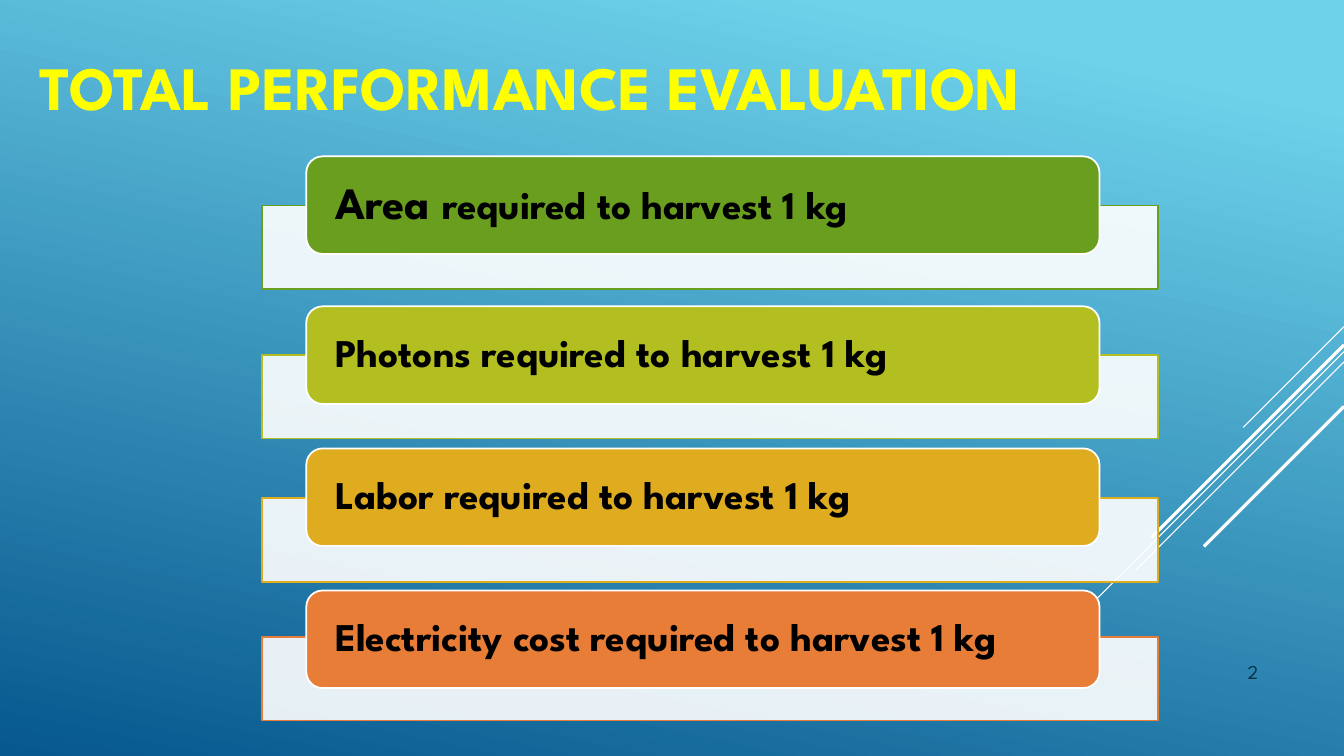
from lxml import etree
from pptx import Presentation
from pptx.dml.color import RGBColor
from pptx.enum.shapes import MSO_CONNECTOR, MSO_SHAPE
from pptx.enum.text import MSO_ANCHOR, PP_ALIGN
from pptx.oxml.ns import qn
from pptx.util import Cm, Pt

RECTANGLE, ROUNDED = MSO_SHAPE.RECTANGLE, MSO_SHAPE.ROUNDED_RECTANGLE
STRAIGHT = MSO_CONNECTOR.STRAIGHT
MIDDLE, BOTTOM = MSO_ANCHOR.MIDDLE, MSO_ANCHOR.BOTTOM
LEFT, RIGHT = PP_ALIGN.LEFT, PP_ALIGN.RIGHT

WHITE = RGBColor(0xFF, 0xFF, 0xFF)
BLACK = RGBColor(0x00, 0x00, 0x00)
YELLOW = RGBColor(0xFF, 0xFF, 0x00)
NAVY = RGBColor(0x0A, 0x30, 0x4A)
SKY = RGBColor(0x6E, 0xD2, 0xEB)
DEEP_BLUE = RGBColor(0x06, 0x58, 0x8E)
GREEN = RGBColor(0x6A, 0x9E, 0x1F)
LIME = RGBColor(0xB3, 0xBE, 0x20)
GOLD = RGBColor(0xDF, 0xAC, 0x1F)
ORANGE = RGBColor(0xE8, 0x7D, 0x37)

PAGE_WIDTH = 33.87


def add_span(para, text, size, color, bold=True):
    span = para.add_run()
    span.text = text
    formats = {"name": "League Spartan", "size": Pt(size), "bold": bold}
    for name, value in formats.items():
        setattr(span.font, name, value)
    span.font.color.rgb = color


def add_panel(kind, left, top, width, height, fill, line):
    panel = page.shapes.add_shape(kind, Cm(left), Cm(top), Cm(width), Cm(height))
    panel.shadow.inherit = False
    panel.fill.solid()
    panel.fill.fore_color.rgb = fill
    panel.line.color.rgb = line
    panel.line.width = Pt(1.25)
    return panel


deck = Presentation()
deck.slide_width, deck.slide_height = Cm(PAGE_WIDTH), Cm(19.05)
page = deck.slides.add_slide(deck.slide_layouts[5])

# Background gradient
backdrop = page.background.fill
backdrop.gradient()
backdrop.gradient_angle = 258
for stop, (position, color) in zip(backdrop.gradient_stops, [(0.1, SKY), (1, DEEP_BLUE)]):
    stop.position = position
    stop.color.rgb = color

# Diagonal lines from the right edge: top, run, weight
for top, run, weight in [
    (8.23, 2.54, 0.75),
    (8.86, 8.28, 0.75),
    (9.12, 5.26, 0.75),
    (8.69, 4.85, 2.25),
    (10.24, 3.53, 2.25),
]:
    ray = page.shapes.add_connector(
        STRAIGHT, Cm(PAGE_WIDTH), Cm(top), Cm(PAGE_WIDTH - run), Cm(top + run))
    ray.line.color.rgb = WHITE
    ray.line.width = Pt(weight)
    etree.SubElement(ray._element.spPr, qn("a:effectLst"))

# Title
title = page.shapes.title
title.left, title.top, title.width, title.height = Cm(0.74), Cm(0.51), Cm(33.12), Cm(3.53)
title.text_frame.vertical_anchor = MIDDLE
para = title.text_frame.paragraphs[0]
para.alignment = LEFT
para.line_spacing = 0.9
add_span(para, "TOTAL PERFORMANCE EVALUATION", 44, YELLOW)

# Page number
number = page.shapes.add_textbox(Cm(28.78), Cm(15.49), Cm(3.18), Cm(1.85)).text_frame
number.word_wrap = True
number.vertical_anchor = BOTTOM
number.paragraphs[0].alignment = RIGHT
add_span(number.paragraphs[0], "2", 14, NAVY, bold=False)

# Criteria: bar top, label top, color, text spans with sizes
criteria = [
    (5.18, 3.94, GREEN, [("Area ", 32), ("required to harvest 1 kg", 28)]),
    (8.94, 7.72, LIME, [("Photons required to harvest 1 kg", 28)]),
    (12.55, 11.3, GOLD, [("Labor required to harvest 1 kg", 28)]),
    (16.05, 14.88, ORANGE, [("Electricity cost required to harvest 1 kg", 28)]),
]
for bar_top, label_top, color, spans in criteria:
    bar = add_panel(RECTANGLE, 6.6, bar_top, 22.58, 2.11, WHITE, color)
    bar_color = bar._element.spPr.find(qn("a:solidFill"))[0]
    etree.SubElement(bar_color, qn("a:alpha"), val="90000")

    label = add_panel(ROUNDED, 7.72, label_top, 19.99, 2.46, color, WHITE)
    frame = label.text_frame
    frame_formats = {
        "word_wrap": True, "vertical_anchor": MIDDLE,
        "margin_left": Cm(0.61), "margin_right": Cm(0.61),
        "margin_top": 0, "margin_bottom": 0,
    }
    for name, value in frame_formats.items():
        setattr(frame, name, value)
    para = frame.paragraphs[0]
    para.alignment = LEFT
    para.line_spacing = 0.9
    for text, size in spans:
        add_span(para, text, size, BLACK)

deck.save("out.pptx")
